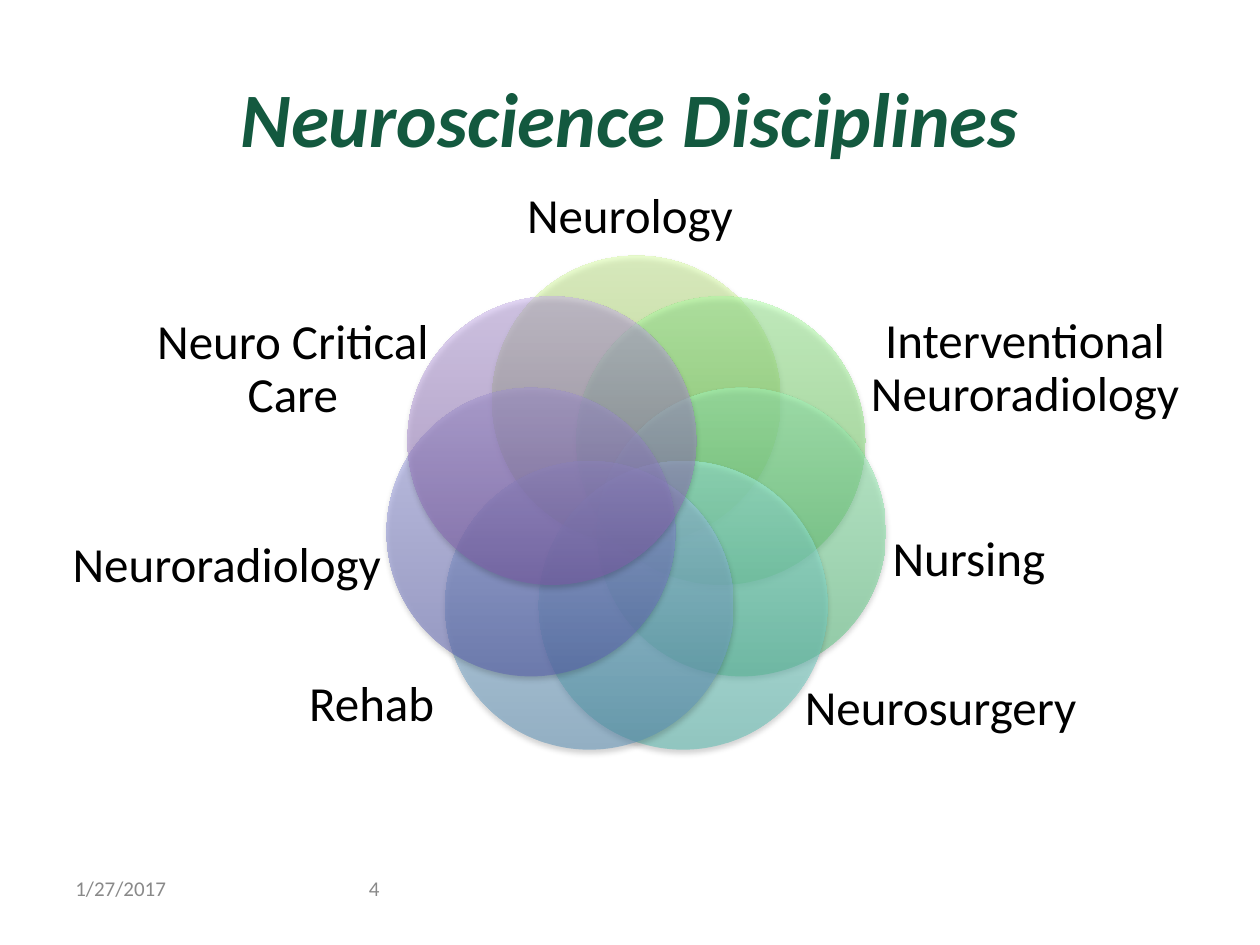
import math

from lxml import etree
from pptx import Presentation
from pptx.dml.color import RGBColor
from pptx.enum import shapes, text
from pptx.oxml.ns import qn
from pptx.util import Inches, Pt

COLORS = {"title": "13593F", "label": "000000", "footer": "898989", "shadow": "000000"}
FONT = "Calibri"

# Clockwise from the top: label, label box, bottom colour, top colour
DISCIPLINES = [
    ("Neurology", (4.05, 1.48, 1.9, 0.49), "A0CA4A", "DAFFA5"),
    ("Interventional Neuroradiology", (6.89, 2.41, 2.49, 1.04), "5FC54D", "ADFFA4"),
    ("Nursing", (7, 4.16, 1.38, 0.58), "4FC079", "A5FCBE"),
    ("Neurosurgery", (6.26, 5.33, 2.41, 0.6), "52BBAF", "A8F8ED"),
    ("Rehab", (2.21, 5.41, 1.48, 0.38), "558EB6", "ABD1F4"),
    ("Neuroradiology", (0.42, 4.08, 2.76, 0.83), "585EB1", "AEB1F1"),
    ("Neuro Critical Care", (1.21, 2.41, 2.23, 1.05), "7F5BAB", "C8B0ED"),
]


def add_text(s, box, words, size, color, align=text.PP_ALIGN.LEFT,
             margins=(0.1, 0.05), spacing=1.0, emphasis=False):
    tf = s.shapes.add_textbox(*map(Inches, box)).text_frame
    tf.word_wrap = True
    tf.vertical_anchor = text.MSO_ANCHOR.MIDDLE
    tf.margin_left = tf.margin_right = Inches(margins[0])
    tf.margin_top = tf.margin_bottom = Inches(margins[1])
    p = tf.paragraphs[0]
    p.alignment = align
    p.line_spacing = spacing
    r = p.add_run()
    r.text = words
    r.font.name = FONT
    r.font.size = Pt(size)
    r.font.bold = r.font.italic = emphasis
    r.font.color.rgb = RGBColor.from_string(color)


def set_alpha(color_element, percent):
    etree.SubElement(color_element, qn("a:alpha"), val=str(percent * 1000))


def add_soft_shadow(sp):
    sp.shadow.inherit = False
    effects = sp.element.spPr.find(qn("a:effectLst"))
    shadow = etree.SubElement(effects, qn("a:outerShdw"), blurRad=str(Pt(3.1)),
                              dist=str(Pt(1.8)), dir="5400000", rotWithShape="0")
    color = etree.SubElement(shadow, qn("a:srgbClr"), val=COLORS["shadow"])
    set_alpha(color, 35)


def add_petal(s, box, bottom, top):
    """Half-transparent circle, shaded from bottom to top."""
    sp = s.shapes.add_shape(shapes.MSO_SHAPE.OVAL, *map(Inches, box))
    sp.fill.gradient()
    sp.fill.gradient_angle = 90
    for stop, color in zip(sp.fill.gradient_stops, (bottom, top)):
        stop.color.rgb = RGBColor.from_string(color)
    for color in sp.element.spPr.iter(qn("a:srgbClr")):
        set_alpha(color, 50)
    sp.line.fill.background()
    add_soft_shadow(sp)


def add_venn(s, box):
    """Ring of overlapping circles filling the height of the box, with labels."""
    left, top, width, height = box
    size = 2.29
    step = 2 * math.pi / len(DISCIPLINES)
    radius = (height - size) / (1 + math.cos(step / 2))
    center_x, center_y = left + width / 2, top + size / 2 + radius
    for i, (label, label_box, dark, light) in enumerate(DISCIPLINES):
        x = center_x + radius * math.sin(i * step) - size / 2
        y = center_y - radius * math.cos(i * step) - size / 2
        add_petal(s, (x, y, size, size), dark, light)
        add_text(s, label_box, label, 28, COLORS["label"], text.PP_ALIGN.CENTER,
                 margins=(0, 0), spacing=0.9)


def add_footer(s, box):
    left, top, width, height = box
    for i, words in enumerate(("1/27/2017", "4")):
        add_text(s, (left + i * width / 2, top, width / 2, height), words, 12,
                 COLORS["footer"])


def main():
    prs = Presentation()
    prs.slide_width, prs.slide_height = Inches(10), Inches(7.5)
    s = prs.slides.add_slide(prs.slide_layouts[6])
    add_venn(s, (3.07, 2.03, 3.96, 3.92))
    add_footer(s, (0.5, 6.85, 4.66, 0.4))
    add_text(s, (0.5, 0.3, 9, 1.25), "Neuroscience Disciplines", 44, COLORS["title"],
             text.PP_ALIGN.CENTER, emphasis=True)
    prs.save("out.pptx")


if __name__ == "__main__":
    main()
